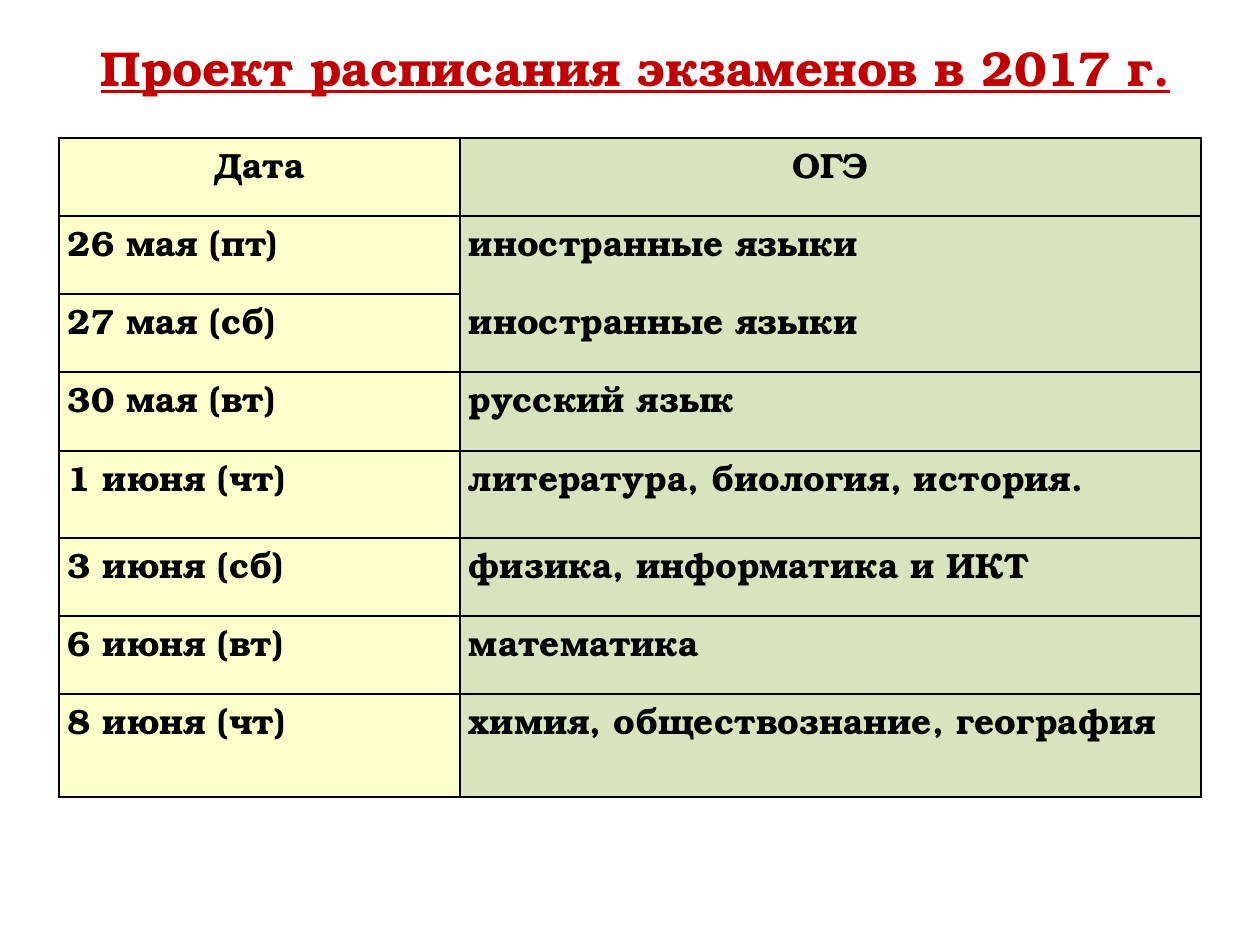
from lxml import etree
from pptx import Presentation
from pptx.dml.color import RGBColor
from pptx.enum.text import MSO_ANCHOR, PP_ALIGN
from pptx.oxml.ns import qn
from pptx.util import Pt

CENTER, LEFT, TOP = PP_ALIGN.CENTER, PP_ALIGN.LEFT, MSO_ANCHOR.TOP
FONT = "TeX Gyre Bonum"
COLORS = {"title": "C00000", "text": "000000", "line": "000000",
          "date": "FFFFCC", "exam": "D7E4BD"}

TITLE = "Проект расписания экзаменов в 2017 г."
# Date, exams, row height in px
ROWS = [
    ("Дата", "ОГЭ", 78),
    ("26 мая (пт)", "иностранные языки", 78),
    ("27 мая (сб)", "иностранные языки", 78),
    ("30 мая (вт)", "русский язык", 79),
    ("1 июня (чт)", "литература, биология, история.", 87),
    ("3 июня (сб)", "физика, информатика и ИКТ", 78),
    ("6 июня (вт)", "математика", 78),
    ("8 июня (чт)", "химия, обществознание, география", 103),
]
COLS = [("date", 401), ("exam", 741)]
OPEN = {(1, 1): "B", (2, 1): "T"}  # cell sides without a line


def px(n):
    return round(n * 914400 / 126)


def style(para, size, color, align):
    para.alignment = align
    for run in para.runs:
        font = run.font
        font.name, font.size, font.bold = FONT, Pt(size), True
        font.color.rgb = RGBColor.from_string(COLORS[color])


def add_lines(cell, skip):
    props = cell._tc.get_or_add_tcPr()
    for side in "LRTB":
        line = etree.SubElement(props, qn(f"a:ln{side}"), w=str(Pt(1)))
        if side == skip:
            etree.SubElement(line, qn("a:noFill"))
        else:
            fill = etree.SubElement(line, qn("a:solidFill"))
            etree.SubElement(fill, qn("a:srgbClr"), val=COLORS["line"])


prs = Presentation()
prs.slide_width, prs.slide_height = px(1260), px(945)
slide = prs.slides.add_slide(prs.slide_layouts[6])

# Title
box = slide.shapes.add_textbox(px(88), px(38), px(1109), px(99))
frame = box.text_frame
frame.word_wrap, frame.vertical_anchor = True, TOP
frame.margin_left, frame.margin_right = 0, px(14)
frame.margin_top = frame.margin_bottom = 0
frame.text = TITLE
head = frame.paragraphs[0]
style(head, 28, "title", CENTER)
head.runs[0].font.underline = True

# Timetable
wide = sum(w for _, w in COLS)
high = sum(row[-1] for row in ROWS)
table = slide.shapes.add_table(len(ROWS), len(COLS), px(59), px(138),
                               px(wide), px(high)).table
for c, (_, width) in enumerate(COLS):
    table.columns[c].width = px(width)
for r, (*texts, height) in enumerate(ROWS):
    table.rows[r].height = px(height)
    for c, text in enumerate(texts):
        cell = table.cell(r, c)
        cell.margin_left = cell.margin_right = px(9)
        cell.margin_top = cell.margin_bottom = 0
        cell.vertical_anchor = TOP
        add_lines(cell, OPEN.get((r, c)))
        cell.fill.solid()
        cell.fill.fore_color.rgb = RGBColor.from_string(COLORS[COLS[c][0]])
        cell.text = text
        style(cell.text_frame.paragraphs[0], 20, "text",
              LEFT if r else CENTER)

prs.save("out.pptx")
